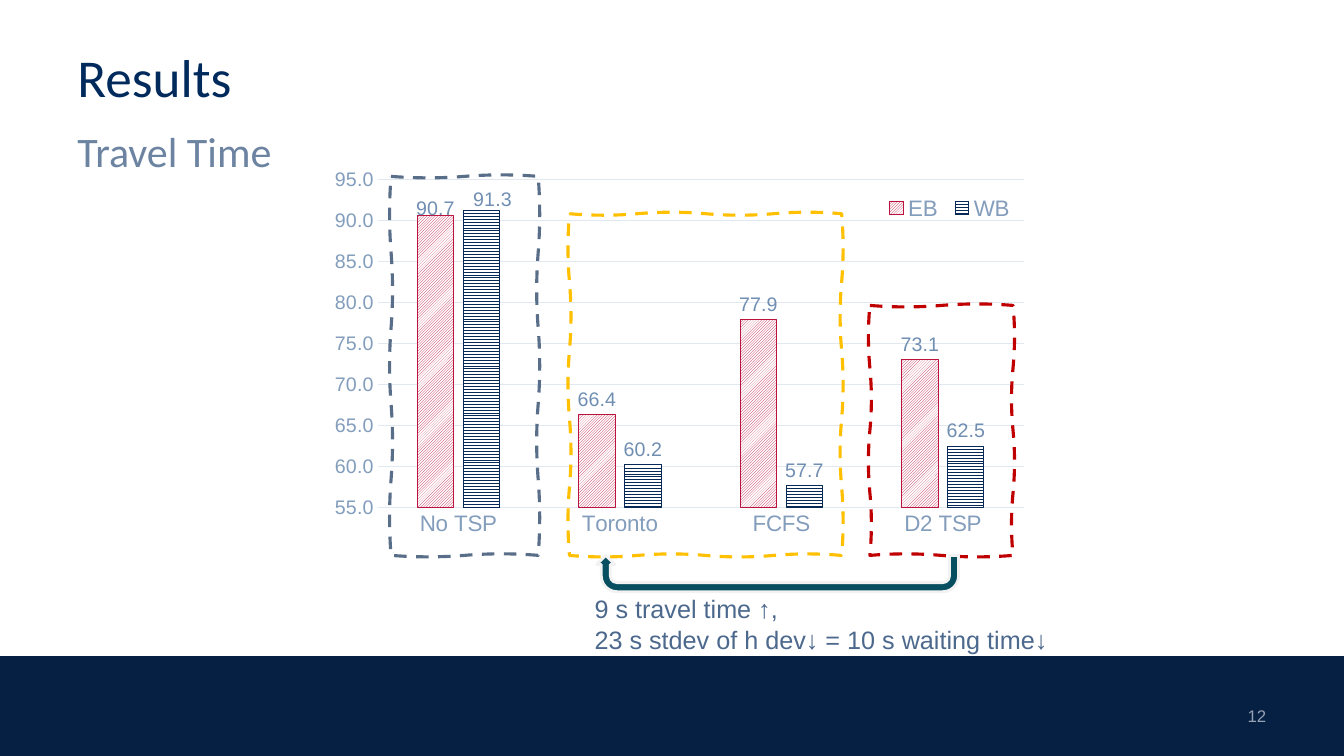
from lxml.etree import SubElement
from pptx import Presentation
from pptx.chart.data import CategoryChartData
from pptx.dml.color import RGBColor
from pptx.enum.chart import XL_CHART_TYPE, XL_LABEL_POSITION, XL_LEGEND_POSITION, XL_TICK_MARK
from pptx.enum.dml import MSO_LINE, MSO_PATTERN
from pptx.enum.shapes import MSO_SHAPE
from pptx.enum.text import MSO_ANCHOR, PP_ALIGN
from pptx.oxml import parse_xml
from pptx.oxml.ns import nsdecls, qn
from pptx.util import Inches, Pt


def color(value):
    """Turn a hex string into a colour."""
    return RGBColor.from_string(value)


class SlideBuilder:
    """Hold the text styles and the current slide."""

    styles = {
        "title": {"name": "Calibri", "size": Pt(38), "color": "002A5C"},
        "subtitle": {"name": "Calibri", "size": Pt(30), "color": "6C84A1"},
        "note": {"name": "Arial", "size": Pt(18), "color": "4C698D"},
        "number": {"name": "Arial", "size": Pt(12), "color": "96A1B3"},
        "chart": {"name": "Arial", "size": Pt(10), "color": "4C698D"},
        "category": {"name": "Arial", "size": Pt(16), "color": "839DBC"},
        "value": {"name": "Arial", "size": Pt(14), "color": "839DBC"},
        "label": {"name": "Arial", "size": Pt(14), "color": "708EB2"},
    }

    def __init__(self, presentation):
        """Add a blank slide."""
        self.slide = presentation.slides.add_slide(presentation.slide_layouts[6])

    def format_font(self, font, style):
        """Apply a named style to a font."""
        for attribute, value in self.styles[style].items():
            if attribute == "color":
                font.color.rgb = color(value)
            else:
                setattr(font, attribute, value)

    def text(self, box, lines, style, anchor=MSO_ANCHOR.TOP, alignment=PP_ALIGN.LEFT):
        """Add a text box with one paragraph per line."""
        frame = self.slide.shapes.add_textbox(*map(Inches, box)).text_frame
        frame.word_wrap = True
        frame.vertical_anchor = anchor
        frame.text = "\n".join(lines)
        for paragraph in frame.paragraphs:
            paragraph.alignment = alignment
            self.format_font(paragraph.runs[0].font, style)

    def shape(self, kind, box, fill, line=None, rotation=0, adjustments=()):
        """Add a filled preset shape."""
        shape = self.slide.shapes.add_shape(kind, *map(Inches, box))
        shape.shadow.inherit = False
        shape.rotation = rotation
        shape.fill.solid()
        shape.fill.fore_color.rgb = color(fill)
        if line:
            shape.line.color.rgb = color(line)
            shape.line.width = Pt(2)
        else:
            shape.line.fill.background()
        for index, value in enumerate(adjustments):
            shape.adjustments[index] = value

    def wavy_frame(self, box, line):
        """Add a dashed frame with hand-drawn curved edges."""
        left, top, width, height = map(Inches, box)
        corners = [(0, 0), (width, 0), (width, height), (0, height), (0, 0)]
        points = [(0, 0)]
        for (x, y), (end_x, end_y) in zip(corners, corners[1:]):
            across, down = end_x - x, end_y - y
            count = round(abs(across + down) / Inches(0.7))
            points += [(x + across * step // count, y + down * step // count)
                       for step in range(1, count + 1)]
        builder = self.slide.shapes.build_freeform(left, top)
        builder.add_line_segments([(left + x, top + y) for x, y in points[1:]], close=True)
        shape = builder.convert_to_shape()
        self.bend(shape, points)
        shape.shadow.inherit = False
        shape.fill.background()
        shape.line.color.rgb = color(line)
        shape.line.width = Pt(2.25)
        shape.line.dash_style = MSO_LINE.DASH

    def bend(self, shape, points):
        """Turn straight segments into arcs that swing to either side in turn."""
        segments = list(shape._element.iter(qn("a:lnTo")))
        swing = Inches(0.02)
        for segment, (x, y), (end_x, end_y) in zip(segments, points, points[1:]):
            segment.tag = qn("a:cubicBezTo")
            across, down = end_x - x, end_y - y
            for position, third in enumerate((1, 2)):
                control = segment.makeelement(qn("a:pt"), {
                    "x": str(x + across * third // 3 + (swing if down else 0)),
                    "y": str(y + down * third // 3 + (swing if across else 0)),
                })
                segment.insert(position, control)
            swing = -swing

    def layout(self, values, inner=False):
        """Return a manual chart layout element."""
        element = parse_xml(f"<c:layout {nsdecls('c')}><c:manualLayout/></c:layout>")
        settings = [("layoutTarget", "inner")] if inner else []
        if len(values) == 4:
            settings += [("xMode", "edge"), ("yMode", "edge")]
        settings += zip("xywh", values)
        for tag, value in settings:
            SubElement(element[0], qn(f"c:{tag}")).set("val", str(value))
        return element

    def column_chart(self, box, categories, series_formats):
        """Add the clustered column chart with patterned bars."""
        data = CategoryChartData(number_format="0.0")
        data.categories = categories
        for name, values, *_ in series_formats:
            data.add_series(name, values)
        chart = self.slide.shapes.add_chart(
            XL_CHART_TYPE.COLUMN_CLUSTERED, *map(Inches, box), data).chart
        self.format_font(chart.font, "chart")
        chart.has_title = False
        chart.has_legend = True
        chart.legend.position = XL_LEGEND_POSITION.RIGHT
        chart.legend.include_in_layout = False
        self.format_font(chart.legend.font, "category")
        chart.legend._element.find(qn("c:legendPos")).addnext(
            self.layout((0.78, 0.09, 0.19, 0.1)))
        plot_area = chart._chartSpace.chart.plotArea
        for existing in plot_area.findall(qn("c:layout")):
            plot_area.remove(existing)
        plot_area.insert(0, self.layout((0.103, 0.075, 0.872, 0.751), True))
        for axis, style in ((chart.category_axis, "category"), (chart.value_axis, "value")):
            axis.major_tick_mark = axis.minor_tick_mark = XL_TICK_MARK.NONE
            self.format_font(axis.tick_labels.font, style)
        axis = chart.value_axis
        axis.minimum_scale = 55
        axis.tick_labels.number_format = "0.0"
        axis.tick_labels.number_format_is_linked = False
        axis.format.line.fill.background()
        for line in (chart.category_axis.format.line, axis.major_gridlines.format.line):
            line.color.rgb = color("E2E8F0")
            line.width = Pt(0.75)
        plot = chart.plots[0]
        plot.gap_width, plot.overlap, plot.vary_by_categories = 219, -27, False
        for series, (_, _, ink, pattern, shift) in zip(plot.series, series_formats):
            self.format_series(series, ink, pattern, shift)

    def format_series(self, series, ink, pattern, shift):
        """Pattern the bars and shift the first value label."""
        fill = series.format.fill
        fill.patterned()
        fill.pattern = pattern
        fill.fore_color.rgb = color(ink)
        fill.back_color.rgb = color("FFFFFF")
        series.format.line.color.rgb = color(ink)
        series.format.line.width = Pt(0.75)
        labels = series.data_labels
        labels.show_value = True
        labels.number_format = "0.0"
        labels.number_format_is_linked = False
        first_label = series.points[0].data_label
        for label in (labels, first_label):
            label.position = XL_LABEL_POSITION.OUTSIDE_END
            self.format_font(label.font, "label")
        index = labels._element.find(f"{qn('c:dLbl')}/{qn('c:idx')}")
        index.addnext(self.layout(shift))


def main():
    """Build the travel time results slide."""
    presentation = Presentation()
    presentation.slide_width, presentation.slide_height = Inches(40 / 3), Inches(7.5)
    builder = SlideBuilder(presentation)
    builder.shape(MSO_SHAPE.RECTANGLE, (0, 6.51, 40 / 3, 0.99), "052043")
    builder.text((0.67, 0.31, 12, 0.89), ["Results"], "title", MSO_ANCHOR.MIDDLE)
    builder.text((0.67, 1.2, 12, 5.11), ["Travel Time"], "subtitle")
    builder.column_chart(
        (2.99, 1.46, 7.35, 4.33),
        ["No TSP", "Toronto", "FCFS", "D2 TSP"],
        [
            ("EB", (90.7, 66.4, 77.9, 73.1), "BB133E",
             MSO_PATTERN.DARK_UPWARD_DIAGONAL, (0, 0.02)),
            ("WB", (91.3, 60.2, 57.7, 62.5), "062958", MSO_PATTERN.ZIG_ZAG, (0.015, 0.01)),
        ],
    )
    bottom = 5.51
    for left, top, width, line in (
        (3.88, 1.75, 1.46, "586E89"),
        (5.65, 2.12, 2.7, "FFC000"),
        (8.63, 3.03, 1.42, "C00000"),
    ):
        builder.wavy_frame((left, top, width, bottom - top), line)
    builder.shape(MSO_SHAPE.U_TURN_ARROW, (5.92, bottom, 3.59, 0.36), "074E60", "F2F2F2",
                  180, (0.25, 0.25, 0.25, 0.438, 1))
    builder.text((5.8, 5.84, 5.67, 0.71),
                 ["9 s travel time ↑,", "23 s stdev of h dev↓ = 10 s waiting time↓"], "note")
    builder.text((11.65, 6.9, 1.01, 0.4), ["12"], "number", MSO_ANCHOR.MIDDLE, PP_ALIGN.RIGHT)
    presentation.save("out.pptx")


if __name__ == "__main__":
    main()
